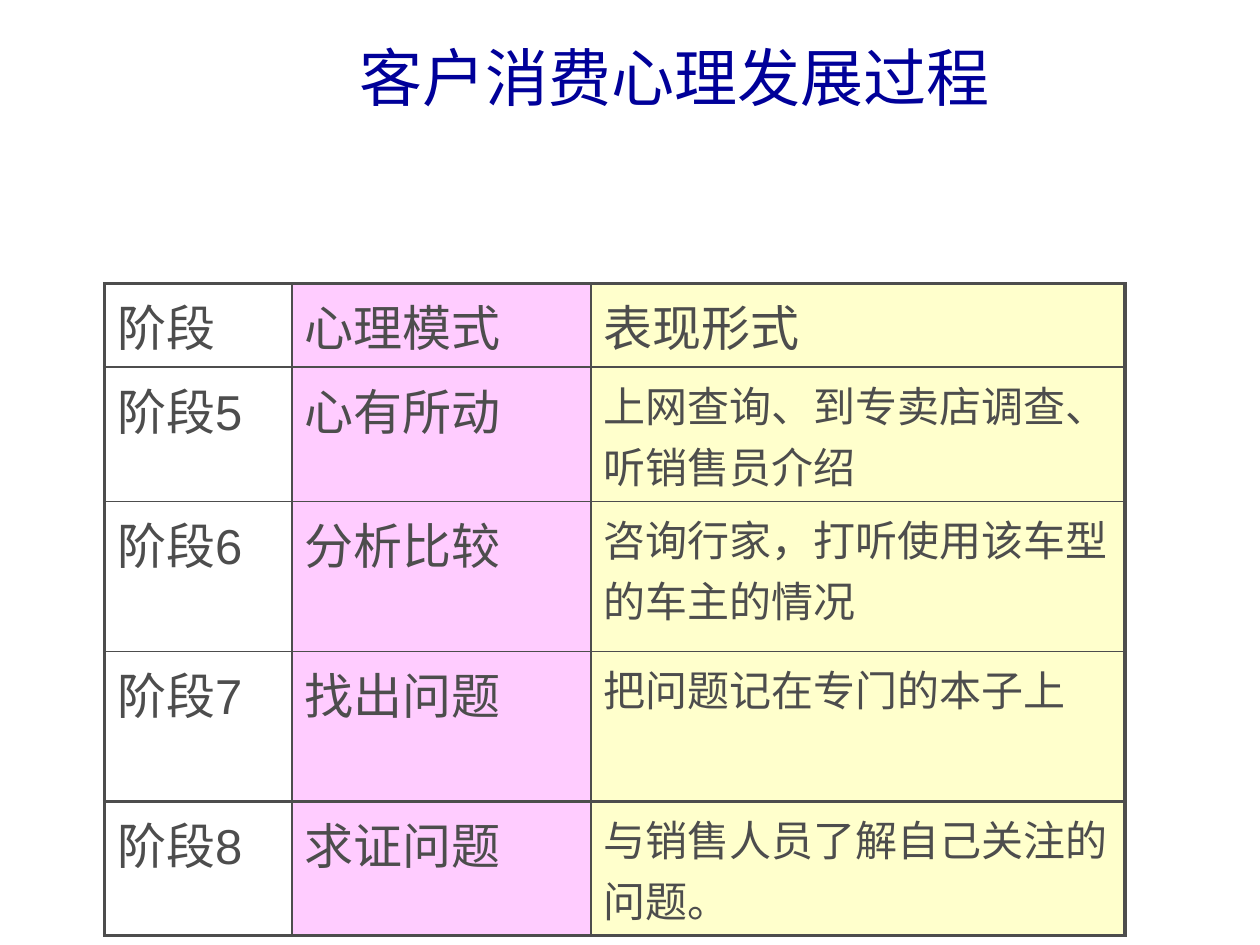
from lxml import etree
from pptx import Presentation
from pptx import util as u
from pptx.dml.color import RGBColor
from pptx.enum import text
from pptx.oxml.ns import qn

GREY = "4D4D4D"
FILLS = [None, "FFCCFF", "FFFFCC"]
COLS = [3.78, 6.02, 10.77]
ROWS = [1.45, 2.41, 3.02, 3.02, 2.41]
STAGES = [
    ["阶段", "心理模式", "表现形式"],
    ["阶段5", "心有所动", "上网查询、到专卖店调查、听销售员介绍"],
    ["阶段6", "分析比较", "咨询行家，打听使用该车型的车主的情况"],
    ["阶段7", "找出问题", "把问题记在专门的本子上"],
    ["阶段8", "求证问题", "与销售人员了解自己关注的问题。"],
]


def rgb(color):
    return RGBColor.from_string(color)


def add_run(p, words, size, color):
    r = p.add_run()
    r.text = words
    r.font.size = u.Pt(size)
    r.font.name = "Arial"
    r.font.bold = False
    r.font.color.rgb = rgb(color)


def set_border(cell, side, width):
    ln = etree.SubElement(cell._tc.get_or_add_tcPr(), qn("a:ln" + side), w=str(u.Pt(width)))
    fill = etree.SubElement(ln, qn("a:solidFill"))
    etree.SubElement(fill, qn("a:srgbClr"), val=GREY)


def place_title(s, x, y, w, h):
    sp = s.shapes.title
    sp.left, sp.top, sp.width, sp.height = u.Cm(x), u.Cm(y), u.Cm(w), u.Cm(h)
    tf = sp.text_frame
    tf.word_wrap = True
    tf.auto_size = text.MSO_AUTO_SIZE.NONE
    tf.vertical_anchor = text.MSO_ANCHOR.MIDDLE
    p = tf.paragraphs[0]
    p.alignment = text.PP_ALIGN.LEFT
    add_run(p, "客户消费心理发展过程", 36, "000099")


def place_table(s, x, y, w, h):
    last_row, last_col = len(ROWS) - 1, len(COLS) - 1
    table = s.shapes.add_table(len(ROWS), len(COLS), u.Cm(x), u.Cm(y), u.Cm(w), u.Cm(h)).table
    table.first_row = table.horz_banding = False
    for col, share in zip(table.columns, COLS):
        col.width = u.Cm(w * share / sum(COLS))
    for row, share in zip(table.rows, ROWS):
        row.height = u.Cm(h * share / sum(ROWS))
    for i, stage in enumerate(STAGES):
        for j, words in enumerate(stage):
            cell = table.cell(i, j)
            thick = {
                "L": j == 0,
                "R": j == last_col,
                "T": i in (0, last_row),
                "B": i >= last_row - 1,
            }
            for side, heavy in thick.items():
                set_border(cell, side, 2.25 if heavy else 1)
            if FILLS[j]:
                cell.fill.solid()
                cell.fill.fore_color.rgb = rgb(FILLS[j])
            else:
                cell.fill.background()
            size = 24 if i and j == last_col else 28
            add_run(cell.text_frame.paragraphs[0], words, size, GREY)


def main():
    prs = Presentation()
    prs.slide_width, prs.slide_height = u.Cm(25.4), u.Cm(19.05)
    s = prs.slides.add_slide(prs.slide_layouts[5])
    place_table(s, 2.11, 5.72, sum(COLS), sum(ROWS))
    place_title(s, 6.99, 0.76, 18.41, 1.57)
    prs.save("out.pptx")


if __name__ == "__main__":
    main()
